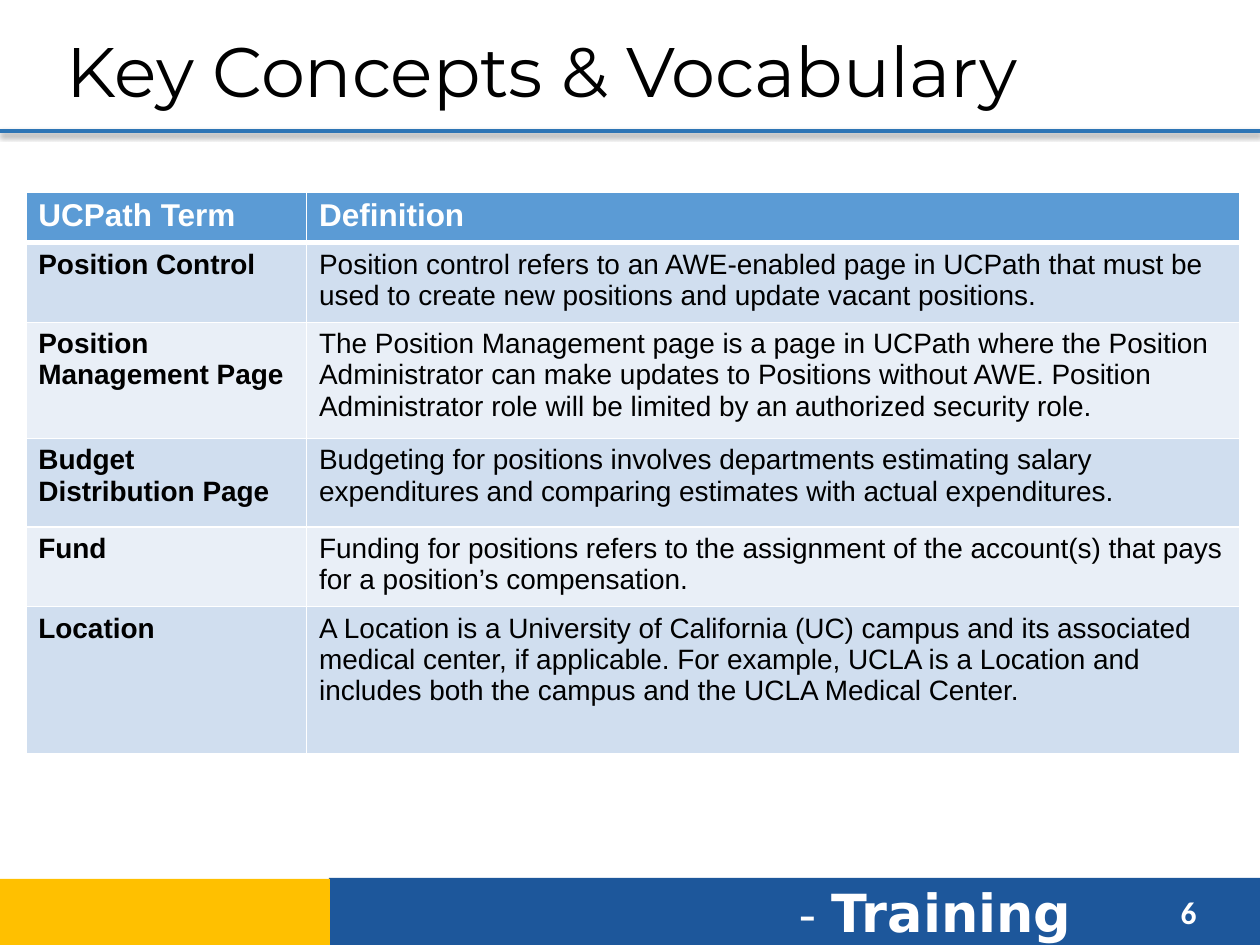
from lxml.etree import SubElement
from pptx import Presentation
from pptx.dml.color import RGBColor
from pptx.enum.shapes import MSO_CONNECTOR, MSO_SHAPE
from pptx.enum.text import MSO_ANCHOR, MSO_AUTO_SIZE, PP_ALIGN
from pptx.oxml import parse_xml
from pptx.oxml.ns import nsdecls, qn
from pptx.util import Cm, Pt

HUES = {
    "white": "FFFFFF", "black": "000000", "navy": "1D579B", "gold": "FFC000",
    "rule": "2E75B5", "head": "5B9BD5", "odd": "D0DEEF", "even": "E9EFF7",
}
WIDTHS = [5.66, 18.82]
ROWS = [
    (1.02, "UCPath Term", "Definition"),
    (1.6, "Position Control",
     "Position control refers to an AWE-enabled page in UCPath that must be "
     "used to create new positions and update vacant positions."),
    (2.34, "Position Management Page",
     "The Position Management page is a page in UCPath where the Position "
     "Administrator can make updates to Positions without AWE. Position "
     "Administrator role will be limited by an authorized security role."),
    (1.78, "Budget Distribution Page",
     "Budgeting for positions involves departments estimating salary "
     "expenditures and comparing estimates with actual expenditures."),
    (1.6, "Fund",
     "Funding for positions refers to the assignment of the account(s) that "
     "pays for a position’s compensation."),
    (2.97, "Location",
     "A Location is a University of California (UC) campus and its associated "
     "medical center, if applicable. For example, UCLA is a Location and "
     "includes both the campus and the UCLA Medical Center."),
]


def hue(name):
    return RGBColor.from_string(HUES[name])


def style(font, face, size, color, bold=False):
    font.name, font.size, font.bold = face, Pt(size), bold
    font.color.rgb = hue(color)


def add_bar(slide, x, y, w, h, color):
    bar = slide.shapes.add_shape(MSO_SHAPE.RECTANGLE, Cm(x), Cm(y), Cm(w), Cm(h))
    bar.shadow.inherit = False
    bar.fill.solid()
    bar.fill.fore_color.rgb = hue(color)
    bar.line.fill.background()


def add_text(slide, x, y, w, h):
    box = slide.shapes.add_textbox(Cm(x), Cm(y), Cm(w), Cm(h))
    box.text_frame.word_wrap = True
    return box.text_frame.paragraphs[0]


def add_header(slide, x, y, w, h):
    # Title
    title = slide.shapes.title
    title.left, title.top = Cm(x + 1.09), Cm(y + 0.23)
    title.width, title.height = Cm(w - 1.09), Cm(h - 0.28)
    frame = title.text_frame
    frame.text = "Key Concepts & Vocabulary"
    frame.auto_size = MSO_AUTO_SIZE.NONE
    frame.vertical_anchor = MSO_ANCHOR.MIDDLE
    para = frame.paragraphs[0]
    para.alignment = PP_ALIGN.LEFT
    style(para.font, "Montserrat", 40, "black")

    # Rule with a soft shadow
    rule = slide.shapes.add_connector(
        MSO_CONNECTOR.STRAIGHT, Cm(x), Cm(y + h), Cm(x + w), Cm(y + h))
    rule.line.color.rgb = hue("rule")
    rule.line.width = Pt(2.25)
    rule._element.spPr.append(parse_xml(
        f'<a:effectLst {nsdecls("a")}>'
        '<a:outerShdw blurRad="39370" dist="20320" dir="5400000" rotWithShape="0">'
        f'<a:srgbClr val="{HUES["black"]}"><a:alpha val="38000"/></a:srgbClr>'
        '</a:outerShdw></a:effectLst>'))


def add_edges(cell, base):
    props = cell._tc.get_or_add_tcPr()
    for side in "LRTB":
        size = base if side == "B" else 1
        edge = SubElement(props, qn(f"a:ln{side}"), w=str(Pt(size)))
        fill = SubElement(edge, qn("a:solidFill"))
        SubElement(fill, qn("a:srgbClr"), val=HUES["white"])


def add_terms(slide, x, y):
    high = sum(row[0] for row in ROWS)
    table = slide.shapes.add_table(
        len(ROWS), len(WIDTHS), Cm(x), Cm(y), Cm(sum(WIDTHS)), Cm(high)).table
    for col, width in zip(table.columns, WIDTHS):
        col.width = Cm(width)
    for i, (height, *texts) in enumerate(ROWS):
        table.rows[i].height = Cm(height)
        head = i == 0
        back = "head" if head else "odd" if i % 2 else "even"
        for j, text in enumerate(texts):
            cell = table.cell(i, j)
            cell.text = text
            add_edges(cell, 3 if head else 1)
            cell.fill.solid()
            cell.fill.fore_color.rgb = hue(back)
            style(cell.text_frame.paragraphs[0].font, "Arial",
                  18 if head else 16, "white" if head else "black",
                  head or j == 0)


def add_footer(slide, x, y, w, h):
    # Colour bars
    add_bar(slide, x + 6.63, y, w - 6.63, h, "navy")
    add_bar(slide, x, y + 0.02, 6.65, h, "gold")

    # Course label
    label = add_text(slide, x + 15.85, y - 0.08, 7.11, 1.55)
    for text, size, bold in [("- ", 28, False), ("Training", 30, True)]:
        run = label.add_run()
        run.text = text
        style(run.font, "DejaVu Sans", size, "white", bold)

    # Page number
    page = add_text(slide, x + 23.55, y + 0.18, 1.52, 1.02)
    page.text = "6"
    style(page.font, "Calibri", 18, "white", True)


def main():
    deck = Presentation()
    deck.slide_width, deck.slide_height = Cm(25.4), Cm(19.05)
    slide = deck.slides.add_slide(deck.slide_layouts[5])
    add_header(slide, 0, 0, 25.4, 2.64)
    add_footer(slide, 0, 17.7, 25.4, 1.4)
    add_terms(slide, 0.52, 3.87)
    deck.save("out.pptx")


if __name__ == "__main__":
    main()
